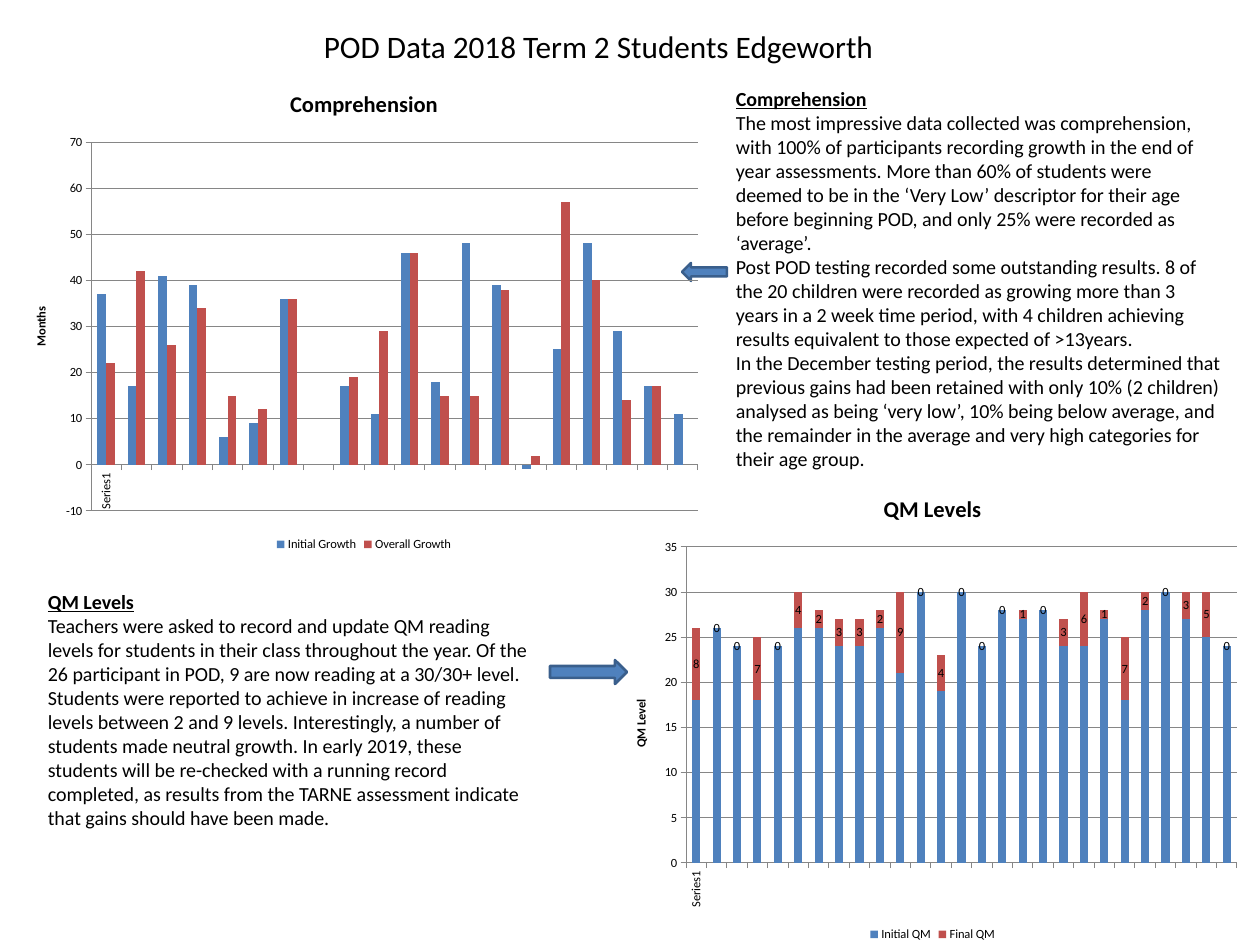
from lxml.etree import SubElement
from pptx import Presentation
from pptx.chart.data import CategoryChartData
from pptx.dml.color import RGBColor
from pptx.enum.chart import XL_CHART_TYPE as ChartType, XL_LABEL_POSITION as LabelPos
from pptx.enum.chart import XL_LEGEND_POSITION as LegendPos, XL_TICK_MARK as Tick
from pptx.enum.shapes import MSO_SHAPE as Shape
from pptx.enum.text import MSO_AUTO_SIZE as AutoSize
from pptx.oxml.ns import qn
from pptx.util import Pt

PX = 914400 // 90
COLORS = {"text": "000000", "blue": "4F81BD", "red": "C0504D",
          "edge": "3A5F8C", "grid": "868686"}


def rgb(name):
    return RGBColor.from_string(COLORS[name])


def assign(target, values):
    for name, value in values.items():
        setattr(target, name, value)


class Board:
    font_name = "Calibri"

    def __init__(self, slide):
        self.slide = slide

    def style_font(self, font, size, **values):
        assign(font, {"name": self.font_name, "size": Pt(size), **values})
        font.color.rgb = rgb("text")

    def text(self, box, paragraphs, size, heading=None):
        frame = self.slide.shapes.add_textbox(*(v * PX for v in box)).text_frame
        assign(frame, {"word_wrap": True, "auto_size": AutoSize.SHAPE_TO_FIT_TEXT})
        lines = ([heading] if heading else []) + paragraphs
        for i, line in enumerate(lines):
            paragraph = frame.paragraphs[0] if i == 0 else frame.add_paragraph()
            run = paragraph.add_run()
            run.text = line
            is_heading = line == heading
            self.style_font(run.font, size, bold=is_heading, underline=is_heading)

    def arrow(self, box, kind):
        arrow = self.slide.shapes.add_shape(kind, *(v * PX for v in box))
        arrow.shadow.inherit = False
        arrow.fill.solid()
        arrow.fill.fore_color.rgb = rgb("blue")
        arrow.line.color.rgb = rgb("edge")
        arrow.line.width = Pt(2)

    def title(self, owner, words, size):
        frame = owner.text_frame
        frame.text = words
        self.style_font(frame.paragraphs[0].runs[0].font, size, bold=True)

    def grey_line(self, line):
        line.color.rgb = rgb("grid")
        line.width = Pt(0.75)

    def place_plot(self, chart, box, plot):
        left, top, width, height = box
        x, y, w, h = plot
        area = chart._chartSpace.chart.plotArea
        for old in area.findall(qn("c:layout")):
            area.remove(old)
        layout = SubElement(area, qn("c:layout"))
        area.insert(0, layout)
        manual = SubElement(layout, qn("c:manualLayout"))
        values = {"layoutTarget": "inner", "xMode": "edge", "yMode": "edge",
                  "x": (x - left) / width, "y": (y - top) / height,
                  "w": w / width, "h": h / height}
        for tag, value in values.items():
            SubElement(manual, qn(f"c:{tag}")).set("val", str(value))

    def chart(self, box, plot, kind, title, unit, scale, series, overlap=0):
        data = CategoryChartData()
        count = len(next(iter(series.values())))
        data.categories = ["Series1"] + [""] * (count - 1)
        for name, values in series.items():
            data.add_series(name, values)
        chart = self.slide.shapes.add_chart(kind, *(v * PX for v in box), data).chart
        self.style_font(chart.font, 10)
        chart.has_title = True
        self.title(chart.chart_title, title, 18)
        chart.has_legend = True
        assign(chart.legend, {"position": LegendPos.BOTTOM, "include_in_layout": False})
        self.place_plot(chart, box, plot)

        students, levels = chart.category_axis, chart.value_axis
        low, high, step = scale
        assign(levels, {"minimum_scale": low, "maximum_scale": high, "major_unit": step,
                        "has_major_gridlines": True})
        levels.has_title = True
        self.title(levels.axis_title, unit, 10)
        self.grey_line(levels.major_gridlines.format.line)
        for axis in (students, levels):
            axis.major_tick_mark = Tick.OUTSIDE
            self.grey_line(axis.format.line)
            self.style_font(axis.tick_labels.font, 10)
        students._element.txPr.find(qn("a:bodyPr")).set("rot", "-5400000")

        assign(chart.plots[0], {"gap_width": 150, "overlap": overlap,
                                "vary_by_categories": False})
        for bars, color in zip(chart.plots[0].series, ("blue", "red")):
            bars.invert_if_negative = False
            bars.format.fill.solid()
            bars.format.fill.fore_color.rgb = rgb(color)
        return chart

    def value_labels(self, bars):
        labels = bars.data_labels
        assign(labels, {"show_value": True, "position": LabelPos.CENTER})
        self.style_font(labels.font, 10)


def main():
    deck = Presentation()
    assign(deck, {"slide_width": 1260 * PX, "slide_height": 945 * PX})
    board = Board(deck.slides.add_slide(deck.slide_layouts[6]))

    board.text((315, 23, 624, 47), ["POD Data 2018 Term 2 Students Edgeworth"], 25)
    board.text((727, 82, 504, 397), [
        "The most impressive data collected was comprehension, with 100% of participants "
        "recording growth in the end of year assessments. More than 60% of students were "
        "deemed to be in the ‘Very Low’ descriptor for their age before beginning POD, "
        "and only 25% were recorded as ‘average’.",
        "Post POD testing recorded some outstanding results. 8 of the 20 children were "
        "recorded as growing more than 3 years in a 2 week time period, with 4 children "
        "achieving results equivalent to those expected of >13years.",
        "In the December testing period, the results determined that previous gains had "
        "been retained with only 10% (2 children) analysed as being ‘very low’, 10% being "
        "below average, and the remainder in the average and very high categories for "
        "their age group.",
    ], 16, "Comprehension")
    board.text((39, 585, 502, 251), [
        "Teachers were asked to record and update QM reading levels for students in their "
        "class throughout the year. Of the 26 participant in POD, 9 are now reading at a "
        "30/30+ level.",
        "Students were reported to achieve in increase of reading levels between 2 and 9 "
        "levels. Interestingly, a number of students made neutral growth. In early 2019, "
        "these students will be re-checked with a running record completed, as results "
        "from the TARNE assessment indicate that gains should have been made.",
    ], 16, "QM Levels")

    board.arrow((682, 263, 45, 18), Shape.LEFT_ARROW)
    board.arrow((550, 660, 77, 24), Shape.RIGHT_ARROW)

    board.chart(
        (15, 70, 698, 485), (91, 142, 607, 369), ChartType.COLUMN_CLUSTERED,
        "Comprehension", "Months", (-10, 70, 10), {
            "Initial Growth": [37, 17, 41, 39, 6, 9, 36, None, 17, 11,
                               46, 18, 48, 39, -1, 25, 48, 29, 17, 11],
            "Overall Growth": [22, 42, 26, 34, 15, 12, 36, None, 19, 29,
                               46, 15, 15, 38, 2, 57, 40, 14, 17, None],
        })
    reading_levels = board.chart(
        (615, 475, 635, 470), (686, 547, 551, 316), ChartType.COLUMN_STACKED,
        "QM Levels", "QM Level", (0, 35, 5), {
            "Initial QM": [18, 26, 24, 18, 24, 26, 26, 24, 24, 26, 21, 30, 19, 30,
                           24, 28, 27, 28, 24, 24, 27, 18, 28, 30, 27, 25, 24],
            "Final QM": [8, 0, 0, 7, 0, 4, 2, 3, 3, 2, 9, 0, 4, 0,
                         0, 0, 1, 0, 3, 6, 1, 7, 2, 0, 3, 5, 0],
        }, overlap=100)
    board.value_labels(reading_levels.plots[0].series[1])

    deck.save("out.pptx")


if __name__ == "__main__":
    main()
